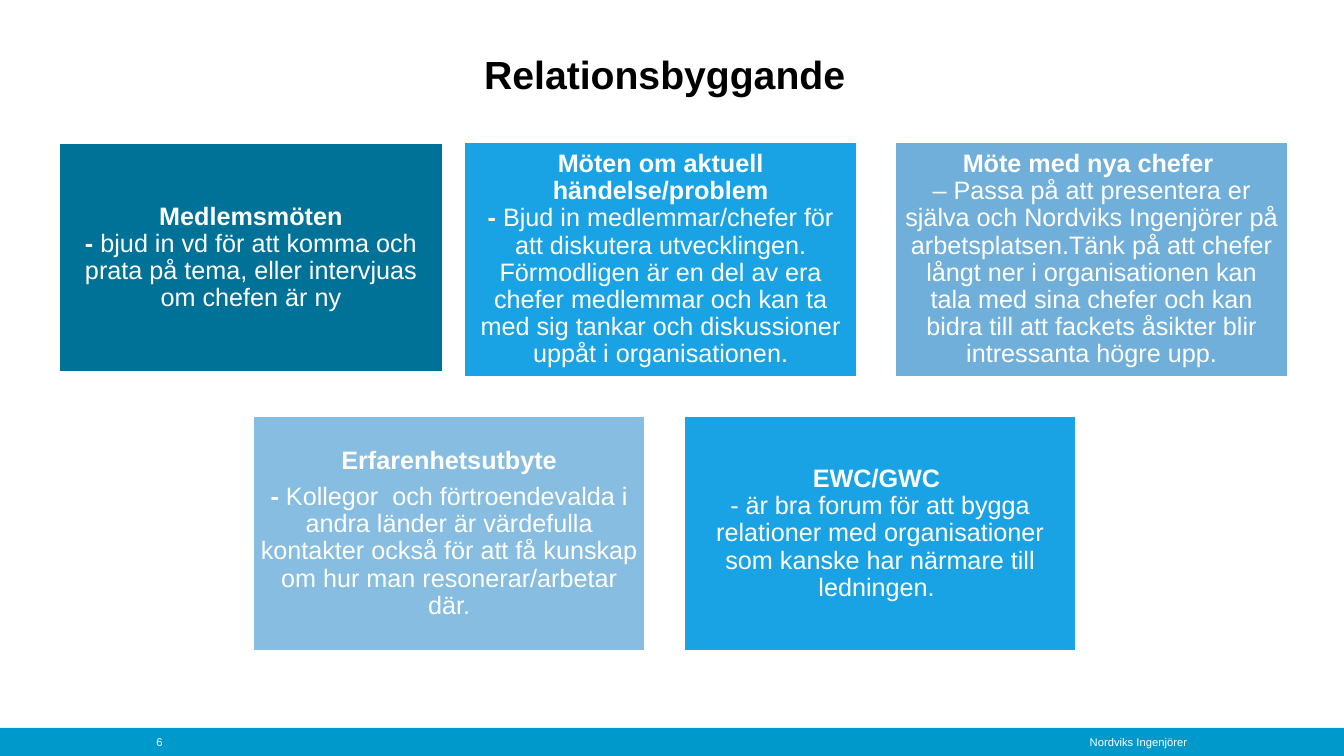
import pptx
import pptx.util
import pptx.dml.color
import pptx.enum.shapes
import pptx.enum.text

Cm = pptx.util.Cm
Pt = pptx.util.Pt
ALIGN = pptx.enum.text.PP_ALIGN
MIDDLE = pptx.enum.text.MSO_ANCHOR.MIDDLE
RECT = pptx.enum.shapes.MSO_SHAPE.RECTANGLE


def color(code):
    return pptx.dml.color.RGBColor.from_string(code)


def add_run(para, text, size, bold=False, code="FFFFFF"):
    run = para.add_run()
    run.text = text
    run.font.name = "Arial"
    run.font.size = Pt(size)
    run.font.bold = bold
    run.font.color.rgb = color(code)


deck = pptx.Presentation()
deck.slide_width = Cm(33.87)
deck.slide_height = Cm(19.05)
slide = deck.slides.add_slide(deck.slide_layouts[5])

# Title
title = slide.shapes.title
title.left, title.top = Cm(6.25), Cm(0.23)
title.width, title.height = Cm(21), Cm(3.15)
title.text_frame.vertical_anchor = MIDDLE
para = title.text_frame.paragraphs[0]
para.alignment = ALIGN.CENTER
para.line_spacing = 1.1
add_run(para, "Relationsbyggande", 28, True, "000000")

# Footer band with page number and sender
band = slide.shapes.add_shape(RECT, 0, Cm(18.34), deck.slide_width, Cm(0.71))
band.shadow.inherit = False
band.fill.solid()
band.fill.fore_color.rgb = color("0099CC")
band.line.fill.background()

for text, left, width, align in [
    ("6", 3.94, 1.5, ALIGN.LEFT),
    ("Nordviks Ingenjörer", 26.92, 3, ALIGN.RIGHT),
]:
    note = slide.shapes.add_textbox(Cm(left), Cm(18.53), Cm(width), Cm(0.33))
    frame = note.text_frame
    frame.word_wrap = True
    frame.vertical_anchor = MIDDLE
    frame.margin_left = frame.margin_right = 0
    frame.margin_top = frame.margin_bottom = 0
    frame.paragraphs[0].alignment = align
    add_run(frame.paragraphs[0], text, 8)

# Cards: column, row, fill, heading, bold dash, body
WIDE, HIGH, STEP = 9.88, 5.92, 10.86
STARTS = [0.85, 6.38]
TOPS = [3.58, 10.49]
cards = [
    (0, 0, "007197", "Medlemsmöten", "- ",
     "bjud in vd för att komma och prata på tema, eller intervjuas "
     "om chefen är ny"),
    (1, 0, "1AA3E4", "Möten om aktuell händelse/problem", "-",
     " Bjud in medlemmar/chefer för att diskutera utvecklingen. "
     "Förmodligen är en del av era chefer medlemmar och kan ta med sig "
     "tankar och diskussioner uppåt i organisationen."),
    (2, 0, "70AFDA", "Möte med nya chefer ", "",
     "– Passa på att presentera er själva och Nordviks Ingenjörer på "
     "arbetsplatsen.Tänk på att chefer långt ner i organisationen kan "
     "tala med sina chefer och kan bidra till att fackets åsikter blir "
     "intressanta högre upp."),
    (0, 1, "86BDE0", "Erfarenhetsutbyte", "- ",
     "Kollegor  och förtroendevalda i andra länder är värdefulla "
     "kontakter också för att få kunskap om hur man resonerar/arbetar där."),
    (1, 1, "1AA3E4", "EWC/GWC ", "",
     "- är bra forum för att bygga relationer med organisationer "
     "som kanske har närmare till ledningen. "),
]

for col, row, fill, head, dash, body in cards:
    card = slide.shapes.add_shape(
        RECT, Cm(STARTS[row] + col * STEP), Cm(TOPS[row]), Cm(WIDE), Cm(HIGH))
    if head == "Medlemsmöten":  # the first card is slightly smaller
        card.left, card.top = Cm(1.5), Cm(3.61)
        card.width, card.height = Cm(9.65), Cm(5.77)
    card.shadow.inherit = False
    card.fill.solid()
    card.fill.fore_color.rgb = color(fill)
    card.line.color.rgb = color("FFFFFF")
    card.line.width = Pt(1)

    frame = card.text_frame
    frame.word_wrap = True
    frame.vertical_anchor = MIDDLE
    frame.margin_left = frame.margin_right = Cm(0.18)
    frame.margin_top = frame.margin_bottom = Cm(0.18)
    para = frame.paragraphs[0]
    add_run(para, head, 18, True)
    if head == "Erfarenhetsutbyte":  # heading in a paragraph of its own
        para = frame.add_paragraph()
    else:
        para.add_line_break()
    if dash:
        add_run(para, dash, 18, True)
    add_run(para, body, 18)
    for para in frame.paragraphs:
        para.alignment = ALIGN.CENTER
        para.line_spacing = 0.9
        para.space_after = Pt(6.3)

deck.save("out.pptx")
